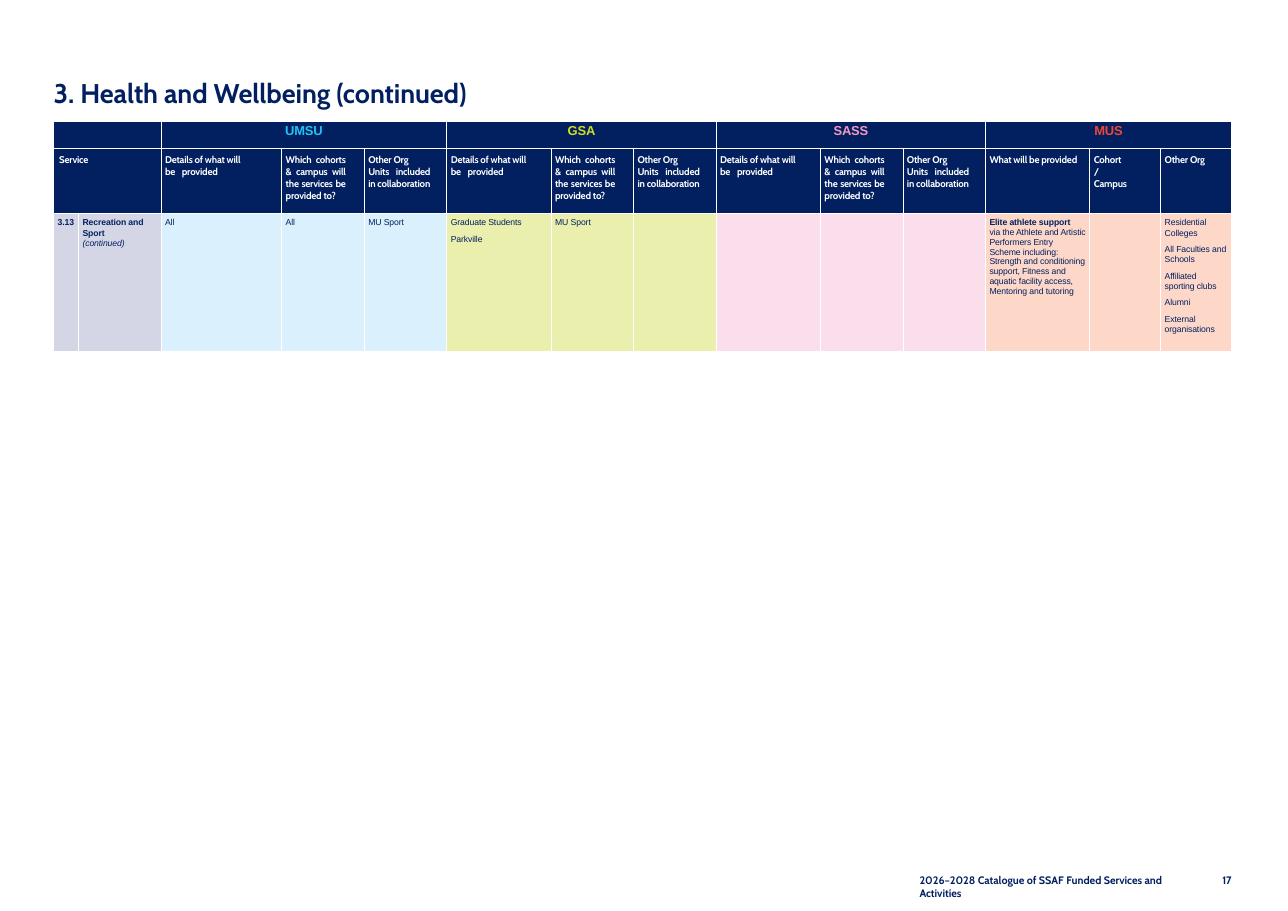
from itertools import accumulate
from lxml import etree
from pptx import Presentation, util as u
from pptx.dml.color import RGBColor
from pptx.enum import text
from pptx.oxml.ns import qn

NAVY = RGBColor(0x02, 0x20, 0x5F)
WHITE = RGBColor(0xFF, 0xFF, 0xFF)
LILAC = RGBColor(0xD5, 0xD6, 0xE5)
SKY, CYAN = RGBColor(0xDA, 0xF1, 0xFD), RGBColor(0x20, 0xC4, 0xF4)
LIME, YELLOW = RGBColor(0xEA, 0xEF, 0xAE), RGBColor(0xD0, 0xDD, 0x28)
ROSE, PINK = RGBColor(0xFB, 0xDE, 0xEB), RGBColor(0xF4, 0x98, 0xC0)
PEACH, RED = RGBColor(0xFD, 0xD7, 0xC8), RGBColor(0xEF, 0x46, 0x37)

# A3 landscape in whole points
presentation = Presentation()
presentation.slide_width = u.Pt(1191)
presentation.slide_height = u.Pt(842)
slide = presentation.slides.add_slide(presentation.slide_layouts[6])


def add_run(paragraph, words, font, size, color, bold=True, italic=False, tracking=0):
    run = paragraph.add_run()
    run.text = words
    run.font.name, run.font.size = font, u.Pt(size)
    run.font.bold, run.font.italic = bold, italic
    run.font.color.rgb = color
    run._r.get_or_add_rPr().set("spc", str(round(tracking * 100)))


def style_cell(cell, fill, left=0.05, top=0.05, right=0):
    cell.margin_left, cell.margin_right = u.Inches(left), u.Inches(right)
    cell.margin_top, cell.margin_bottom = u.Inches(top), 0
    properties = cell._tc.get_or_add_tcPr()
    for side in ("a:lnL", "a:lnR", "a:lnT", "a:lnB"):
        line = etree.SubElement(properties, qn(side), w=str(u.Pt(1)))
        solid = etree.SubElement(line, qn("a:solidFill"))
        etree.SubElement(solid, qn("a:srgbClr"), val=str(WHITE))
    cell.fill.solid()
    cell.fill.fore_color.rgb = fill


# Footer, page number and title
for words, size, tracking, left, top, width, height in (
    ("2026–2028 Catalogue of SSAF Funded Services and Activities",
     10, 0, 11.81, 11.22, 3.64, 0.23),
    ("17", 10, -0.2, 15.7, 11.22, 0.2, 0.23),
    ("3. Health and Wellbeing (continued)", 25, -0.05, 0.69, 0.98, 5.36, 0.44),
):
    box = slide.shapes.add_textbox(*map(u.Inches, (left, top, width, height)))
    frame = box.text_frame
    frame.word_wrap = True
    frame.margin_left = frame.margin_top = frame.margin_right = frame.margin_bottom = 0
    add_run(frame.paragraphs[0], words, "Cabin", size, NAVY, tracking=tracking)

# Table grid: service, then one group of three columns per organisation
COLUMNS = [0.32, 1.06, 1.55, 1.06, 1.06] + [1.34, 1.06, 1.06] * 2 + [1.34, 0.91, 0.91]
ROWS = [0.34, 0.84, 1.77]
GROUP_SPANS = [2, 3, 3, 3, 3]
group_starts = [0, *accumulate(GROUP_SPANS)][:-1]
frame = slide.shapes.add_table(len(ROWS), len(COLUMNS), u.Inches(0.69), u.Inches(1.56),
                               u.Inches(sum(COLUMNS)), u.Inches(sum(ROWS)))
table = frame.table
for column, width in zip(table.columns, COLUMNS):
    column.width = u.Inches(width)
for row, height in zip(table.rows, ROWS):
    row.height = u.Inches(height)

# Organisation row
for index in range(len(COLUMNS)):
    style_cell(table.cell(0, index), NAVY, left=0, top=0.03)
organisations = [("", WHITE), ("UMSU", CYAN), ("GSA", YELLOW), ("SASS", PINK), ("MUS", RED)]
for start, span, (name, color) in zip(group_starts, GROUP_SPANS, organisations):
    cell = table.cell(0, start)
    cell.merge(table.cell(0, start + span - 1))
    if name:
        paragraph = cell.text_frame.paragraphs[0]
        paragraph.alignment = text.PP_ALIGN.CENTER
        add_run(paragraph, name, "Arial", 12, color, tracking=-0.2)

# Heading row: (words, tracking of the space after them), and the text width
WIDE, WIDEST = 4, 12
COHORTS = [("Which cohorts & campus will the services be provided to?", 0)], 0.77
GROUP_HEADINGS = [
    ([("Details of what will be", WIDE), ("provided", 0)], 1.05),
    COHORTS,
    ([("Other Org", WIDEST), ("Units", WIDE), ("included in collaboration", 0)], 0.85),
]
headings = [([("Service", 0)], 0.25), ([], 1)] + GROUP_HEADINGS * 3 + [
    ([("What will be provided", 0)], 1.29),
    ([("Cohort", WIDEST), ("/ Campus", 0)], 0.46),
    ([("Other Org", 0)], 0.86)]
for index, (parts, text_width) in enumerate(headings):
    cell = table.cell(1, index)
    left = 0.07 if index == 0 else 0.05
    style_cell(cell, NAVY, left, top=0.08, right=COLUMNS[index] - left - text_width)
    paragraph = cell.text_frame.paragraphs[0]
    paragraph.line_spacing = 1.02
    if parts is COHORTS[0]:
        paragraph.alignment = text.PP_ALIGN.JUSTIFY
    for words, gap in parts:
        add_run(paragraph, words, "Cabin", 9, WHITE, tracking=-0.2)
        if gap:
            add_run(paragraph, " ", "Cabin", 9, WHITE, tracking=gap)
service_heading = table.cell(1, 0)
service_heading.merge(table.cell(1, 1))
service_heading.margin_right = 0

# Service row: cell > paragraphs > runs of (words, bold, italic, tracking)
REGULAR = False, False, -0.1
BOLD = True, False, -0.1
service = {
    0: [[("3.13", *BOLD)]],
    1: [[("Recreation and Sport ", *BOLD), ("(continued)", False, True, -0.1)]],
    2: [[("All", *REGULAR)]],
    3: [[("All", *REGULAR)]],
    4: [[("MU Sport", *REGULAR)]],
    5: [[("Graduate Students", *REGULAR)], [("Parkville", *REGULAR)]],
    6: [[("MU Sport", *REGULAR)]],
    11: [[("Elite athlete support", *BOLD), (" ", True, False, WIDEST),
          ("via the Athlete and Artistic Performers Entry Scheme including:", *REGULAR)],
         [("Strength and conditioning support, Fitness and aquatic facility access, "
           "Mentoring and tutoring", *REGULAR)]],
    13: [[(words, *REGULAR)] for words in (
        "Residential Colleges", "All Faculties and Schools",
        "Affiliated sporting clubs", "Alumni", "External organisations")],
}
fills = [LILAC] * 2 + [SKY] * 3 + [LIME] * 3 + [ROSE] * 3 + [PEACH] * 3
right_insets = {1: 0.18, 11: 0.05, 13: 0.04}
ELITE = 11
for index, fill in enumerate(fills):
    cell = table.cell(2, index)
    style_cell(cell, fill, top=0.06 if index == ELITE else 0.05,
               right=right_insets.get(index, 0))
    for position, runs in enumerate(service.get(index, [])):
        frame = cell.text_frame
        paragraph = frame.add_paragraph() if position else frame.paragraphs[0]
        paragraph.line_spacing = u.Pt(9 if index == ELITE else 9.5)
        if position and index != ELITE:
            paragraph.space_before = u.Pt(5.7)
        for words, bold, italic, tracking in runs:
            add_run(paragraph, words, "Arial", 8, NAVY, bold, italic, tracking)

presentation.save("out.pptx")
